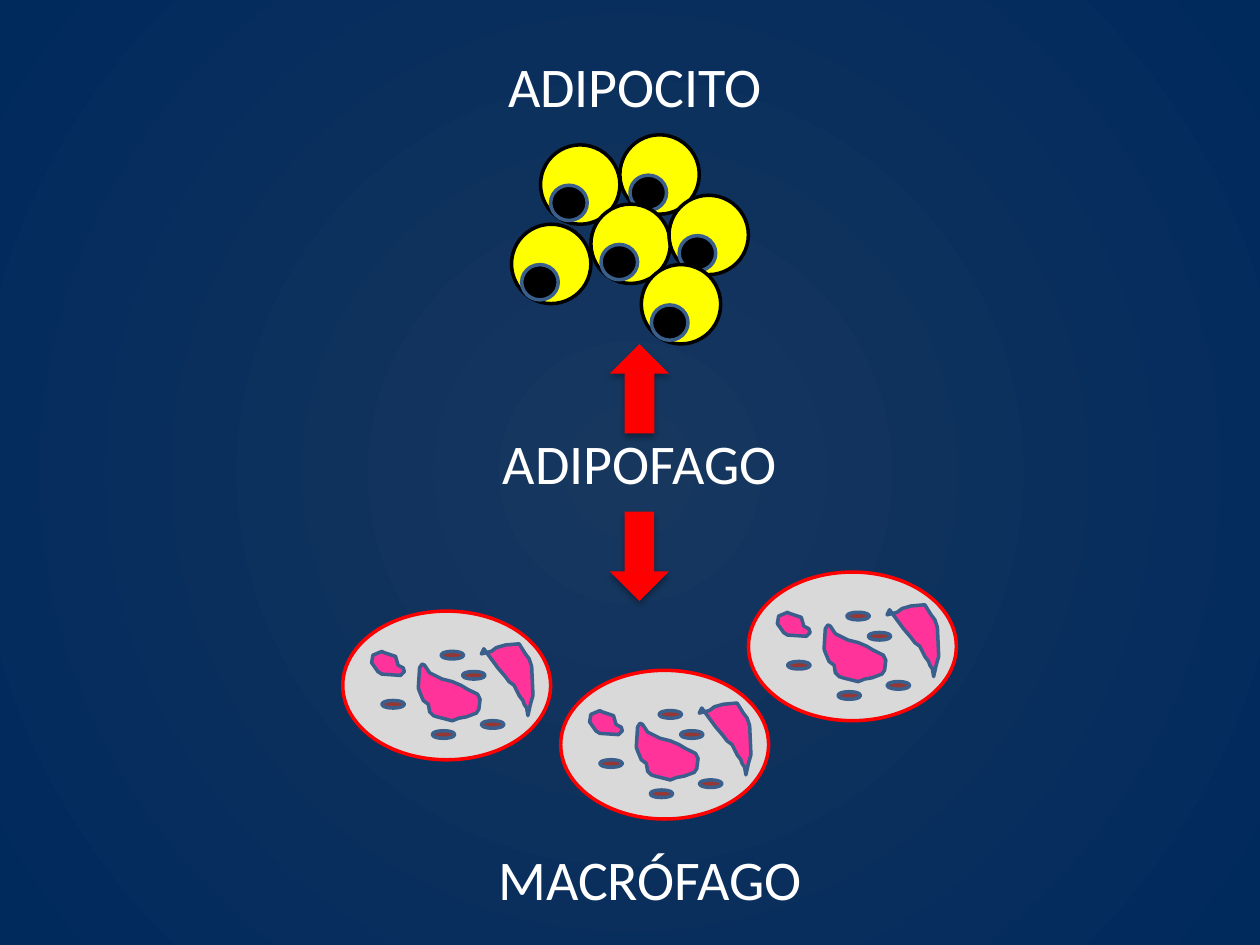
from lxml.etree import SubElement as Sub
from pptx import Presentation
from pptx.dml.color import RGBColor as RGB
from pptx.enum.shapes import MSO_SHAPE as Kind
from pptx.enum.text import MSO_AUTO_SIZE as Auto, PP_ALIGN as Align
from pptx.oxml.ns import qn
from pptx.util import Inches, Pt

COLORS = {
    "center": "17375E", "edge": "00295C", "text": "FFFFFF",
    "fat": "FFFF00", "black": "000000", "outline": "3A5F8C",
    "cell": "D9D9D9", "red": "FF0000", "pink": "FF3399", "grain": "953735",
}

LABELS = [("ADIPOCITO", 3.27, 0.36, 3.54),
          ("ADIPOFAGO", 3.27, 3.35, 3.62),
          ("MACRÓFAGO", 3.35, 6.65, 3.62)]
FAT_CELLS = [(4.92, 1.07), (4.29, 1.15), (4.69, 1.62),
             (4.06, 1.78), (5.31, 1.55), (5.09, 2.1)]
MACROPHAGES = [(2.72, 4.85), (4.45, 5.32), (5.94, 4.54)]
GRAINS = [(0.78, 0.32), (0.71, 0.95), (1.1, 0.87), (0.31, 0.71), (0.95, 0.48)]

# Outlines inside a macrophage, in hundredths of an inch from its corner
NUCLEUS = [(69, 49), (79, 54), (87, 56), (94, 59), (99, 62), (103, 64),
           (107, 66), (109, 70), (108, 78), (106, 81), (98, 84), (92, 85),
           (87, 87), (75, 84), (72, 83), (69, 80), (68, 74), (64, 71),
           (61, 64), (60, 61), (61, 45), (63, 42), (65, 43), (67, 46)]
SPIKE = [(112, 30), (123, 45), (129, 52), (132, 56), (136, 59), (140, 67),
         (143, 71), (144, 74), (146, 77), (147, 83), (149, 74), (151, 67),
         (150, 44), (148, 38), (145, 34), (140, 26), (129, 27), (122, 29),
         (118, 32), (110, 34)]
SPECK = [(33, 33), (42, 36), (44, 43), (48, 45), (49, 48), (46, 51),
         (31, 50), (28, 48), (23, 41), (24, 35), (31, 32)]


class Board:
    """Holds the current slide and the style of everything drawn on it."""

    font, size, width = "Calibri", Pt(32), Pt(2)

    def __init__(self, slide):
        self.slide = slide
        self.shapes = slide.shapes

    def color(self, name):
        return RGB.from_string(COLORS[name])

    def backdrop(self, inner, outer):
        """Fill the background with a gradient that spreads from the middle."""
        fill = self.slide.background.fill
        fill.gradient()
        for stop, name in zip(fill.gradient_stops, (inner, outer)):
            stop.color.rgb = self.color(name)
        fill.gradient_stops[0].position = 0
        fill.gradient_stops[1].position = 1
        grad = self.slide.element.find(".//" + qn("a:gradFill"))
        grad.remove(grad.find(qn("a:lin")))
        ring = Sub(grad, qn("a:path"), {"path": "circle"})
        Sub(ring, qn("a:fillToRect"), l="50000", t="50000", r="50000", b="50000")

    def paint(self, shape, fill, line=None):
        shape.shadow.inherit = False
        shape.fill.solid()
        shape.fill.fore_color.rgb = self.color(fill)
        if line:
            shape.line.color.rgb = self.color(line)
            shape.line.width = self.width
        else:
            shape.line.fill.background()

    def label(self, text, x, y, w):
        box = self.shapes.add_textbox(Inches(x), Inches(y), Inches(w), Inches(0.64))
        frame = box.text_frame
        frame.text = text
        frame.word_wrap = True
        frame.auto_size = Auto.SHAPE_TO_FIT_TEXT
        line = frame.paragraphs[0]
        line.alignment = Align.CENTER
        font = line.runs[0].font
        font.name, font.size = self.font, self.size
        font.color.rgb = self.color("text")

    def oval(self, x, y, w, h, fill, line):
        shape = self.shapes.add_shape(
            Kind.OVAL, Inches(x), Inches(y), Inches(w), Inches(h))
        self.paint(shape, fill, line)

    def patch(self, x, y, points):
        pen = self.shapes.build_freeform(*points[0], scale=Inches(0.01))
        pen.add_line_segments(points[1:], close=True)
        self.paint(pen.convert_to_shape(Inches(x), Inches(y)), "pink", "outline")

    def fat_cell(self, x, y):
        self.oval(x, y, 0.63, 0.63, "fat", "black")
        self.oval(x + 0.08, y + 0.32, 0.29, 0.28, "black", "outline")

    def macrophage(self, x, y):
        self.oval(x, y, 1.65, 1.18, "cell", "red")
        for points in (NUCLEUS, SPIKE, SPECK):
            self.patch(x, y, points)
        for dx, dy in GRAINS:
            self.oval(x + dx, y + dy, 0.18, 0.06, "grain", "outline")

    def arrow(self, x, y, turn=0):
        shape = self.shapes.add_shape(
            Kind.DOWN_ARROW, Inches(x), Inches(y), Inches(0.47), Inches(0.71))
        shape.rotation = turn
        self.paint(shape, "red")
        effects = shape.element.spPr.find(qn("a:effectLst"))
        shade = Sub(effects, qn("a:outerShdw"), blurRad=str(Pt(3.5)),
                    dist=str(Pt(2.2)), dir="5400000", rotWithShape="0")
        tint = Sub(shade, qn("a:srgbClr"), val=COLORS["black"])
        Sub(tint, qn("a:alpha"), val="32000")


def main():
    deck = Presentation()
    deck.slide_width, deck.slide_height = Inches(10), Inches(7.5)
    board = Board(deck.slides.add_slide(deck.slide_layouts[6]))
    board.backdrop("center", "edge")
    for spot in FAT_CELLS:
        board.fat_cell(*spot)
    for spot in MACROPHAGES:
        board.macrophage(*spot)
    for label in LABELS:
        board.label(*label)
    board.arrow(4.84, 4.06)
    board.arrow(4.84, 2.73, turn=180)
    deck.save("out.pptx")


if __name__ == "__main__":
    main()
